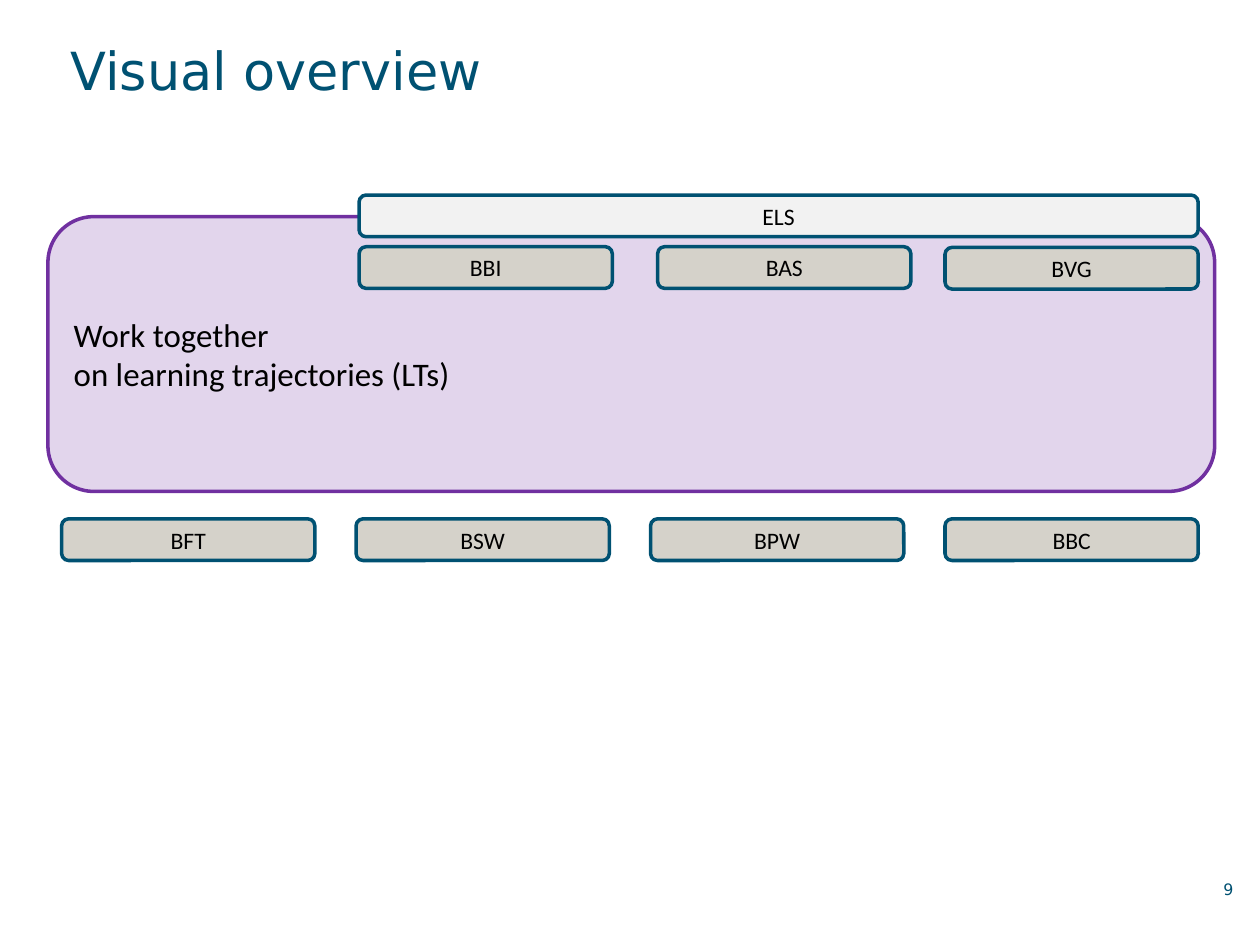
"""Build the visual overview slide of learning trajectories."""
import pptx
import pptx.dml.color
import pptx.enum.shapes
import pptx.enum.text
import pptx.oxml
import pptx.oxml.ns
import pptx.util

Pt = pptx.util.Pt
ALIGN = pptx.enum.text.PP_ALIGN
ANCHOR = pptx.enum.text.MSO_ANCHOR
COLORS = {"blue": "005172", "purple": "7030A0", "stone": "D5D2CA",
          "light": "F2F2F2", "black": "000000"}


def rgb(name):
    return pptx.dml.color.RGBColor.from_string(COLORS[name])


def write(sp, text, size, font="Calibri", color="black", align=ALIGN.LEFT,
          anchor=ANCHOR.MIDDLE, margins=(7.2, 3.6, 7.2, 3.6), spacing=None):
    tf = sp.text_frame
    tf.word_wrap = True
    tf.vertical_anchor = anchor
    tf.margin_left, tf.margin_top, tf.margin_right, tf.margin_bottom = map(Pt, margins)
    p = tf.paragraphs[0]
    p.text = text
    p.alignment = align
    if spacing:
        p.line_spacing = Pt(spacing)
    for r in p.runs:
        r.font.size = Pt(size)
        r.font.name = font
        r.font.color.rgb = rgb(color)


def add_box(x, y, w, h, fill, line):
    sp = s.shapes.add_shape(pptx.enum.shapes.MSO_SHAPE.ROUNDED_RECTANGLE,
                            Pt(x), Pt(y), Pt(w), Pt(h))
    sp.shadow.inherit = False
    sp.fill.solid()
    sp.fill.fore_color.rgb = rgb(fill)
    sp.line.color.rgb = rgb(line)
    sp.line.width = Pt(2)
    return sp


prs = pptx.Presentation()
prs.slide_width, prs.slide_height = Pt(720), Pt(540)
s = prs.slides.add_slide(prs.slide_layouts[6])

title = s.shapes.add_textbox(Pt(38.9), Pt(18), Pt(664.5), Pt(62.6))
write(title, "Visual overview", 30, font="DejaVu Sans", color="blue",
      anchor=ANCHOR.TOP, margins=(1.4, 0, 7.2, 25.2), spacing=40)

number = s.shapes.add_textbox(Pt(671), Pt(501.8), Pt(36.7), Pt(13))
write(number, "9", 9, font="DejaVu Sans", color="blue", align=ALIGN.RIGHT,
      anchor=ANCHOR.TOP, margins=(7.2, 0, 2.9, 0), spacing=12)

panel = add_box(27.4, 123.8, 666.7, 157, "purple", "purple")
color = panel.fill._xPr.find(".//" + pptx.oxml.ns.qn("a:srgbClr"))
color.append(pptx.oxml.parse_xml(
    '<a:alpha xmlns:a="http://schemas.openxmlformats.org/drawingml/2006/main" val="20000"/>'))
write(panel, "Work together \non learning trajectories (LTs)", 18.8)

left, right, width, height = 35.2, 540, 144.7, 23.8
step = (right - left) / 3
boxes = [("BBI", 205.2, 141, width, "stone"),
         ("BAS", 375.8, 141, width, "stone"),
         ("BVG", right, 141.4, width, "stone"),
         ("ELS", 205.2, 111.5, right + width - 205.2, "light")]
boxes += [(name, left + i * step, 296.5, width, "stone")
          for i, name in enumerate(["BFT", "BSW", "BPW", "BBC"])]
for name, x, y, w, fill in boxes:
    sp = add_box(x, y, w, height, fill, "blue")
    write(sp, name, 13.5, align=ALIGN.CENTER)

prs.save("out.pptx")
